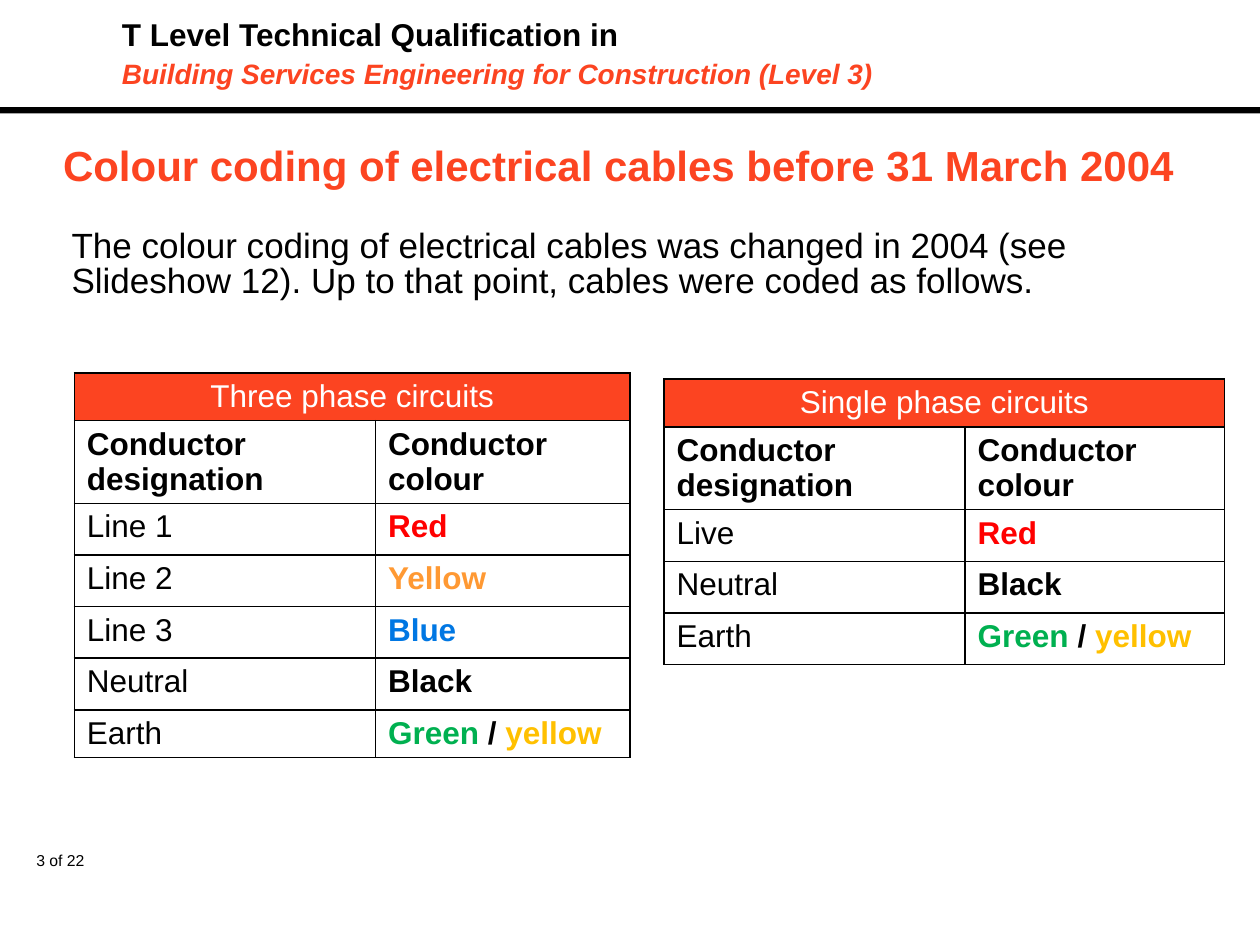
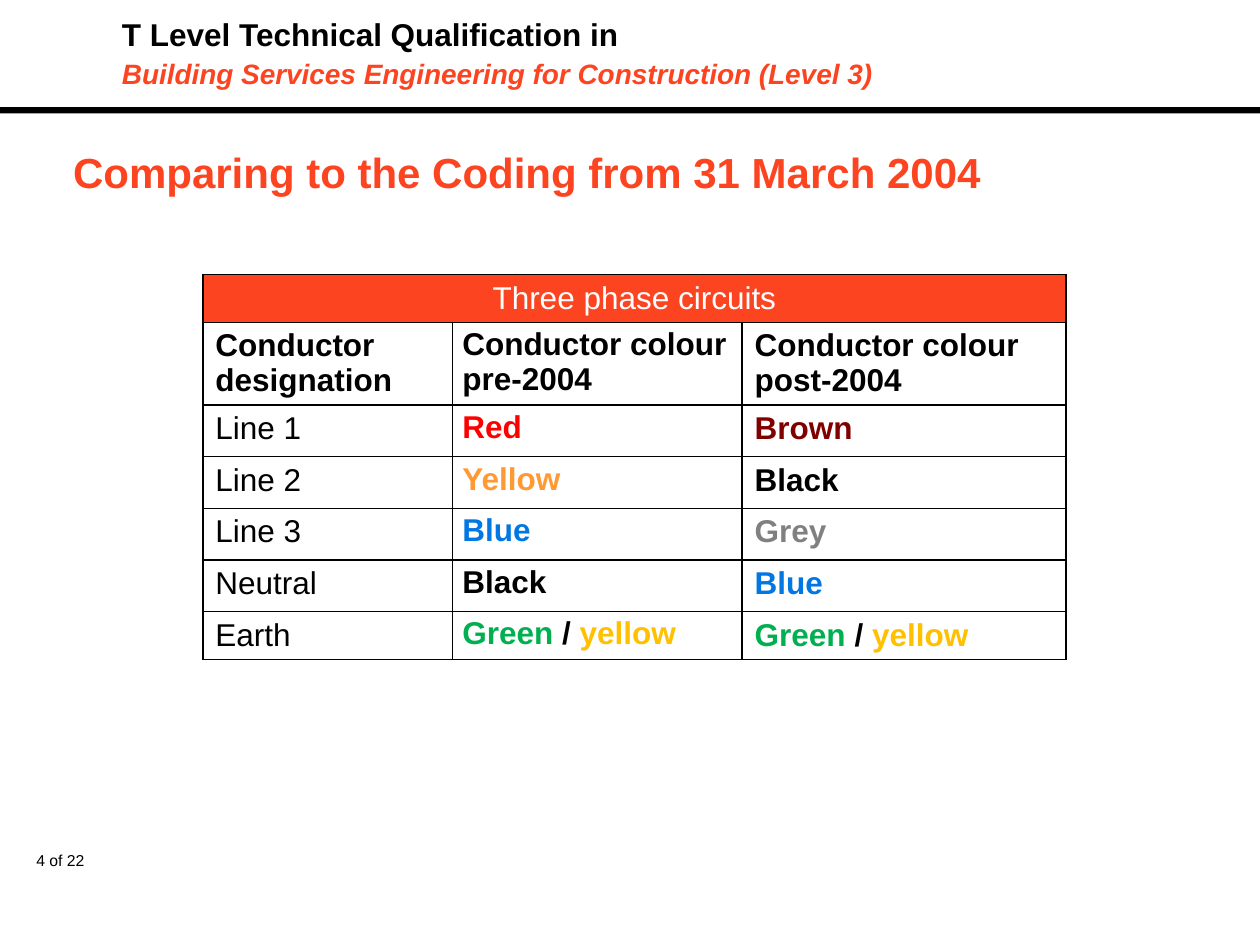
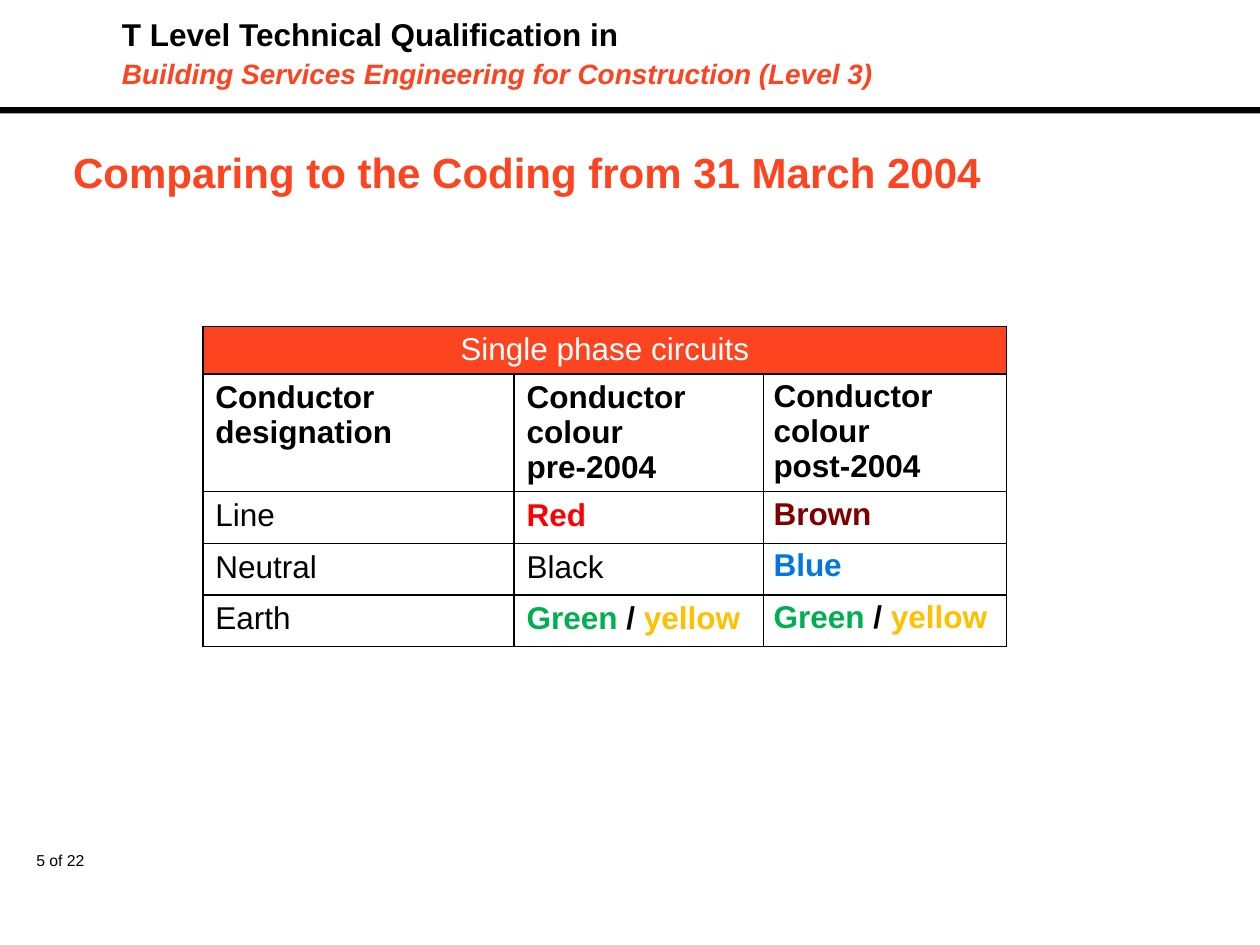
from pptx import Presentation
from pptx.dml.color import RGBColor
from pptx.enum.shapes import MSO_SHAPE as Shape
from pptx.enum.text import MSO_ANCHOR as Anchor, MSO_AUTO_SIZE as AutoSize, PP_ALIGN as Align
from pptx.oxml import parse_xml
from pptx.oxml.ns import nsdecls
from pptx.util import Inches, Pt

# Shared look
FONT = "Arial"
WIDTH, HEIGHT = 10, 7.5
COLOURS = {"accent": "FC4421", "text": "000000", "paper": "FFFFFF"}
WORD_COLOURS = {"Red": "FF0000", "Yellow": "FF9933", "Blue": "0077E3", "Brown": "800000",
                "Grey": "808080", "Green": "00B050", "yellow": "FFC000"}
LINE_SPACING = 20
BANNER_ROW, BODY_ROW, LAST_ROW = 0.37, 0.41, 0.37
TIGHT_INSETS = (0.08, 0.04)
NORMAL_INSETS = (0.1, 0.05)

# Content
PROGRAMME = [("T Level Technical Qualification in", 18, "text", False),
             ("Building Services Engineering for Construction (Level 3)", 16, "accent", True)]
PAGE_TOTAL = 22
FIRST_PAGE = 3
EARTH_COLOUR = "Green / yellow"

SLIDES = [
    {
        "title": "Colour coding of electrical cables before 31 March 2004",
        "title_at": (0.5, 1.1),
        "intro": "The colour coding of electrical cables was changed in 2004 (see "
                 "Slideshow 12). Up to that point, cables were coded as follows.",
        "tables": [
            {"at": (0.59, 2.96), "columns": (2.39, 2.02), "heading_row": 0.65,
             "last_row": LAST_ROW, "banner": "Three phase circuits",
             "rows": [("Conductor designation", "Conductor colour"),
                      ("Line 1", "Red"), ("Line 2", "Yellow"), ("Line 3", "Blue"),
                      ("Neutral", "Black"), ("Earth", EARTH_COLOUR)]},
            {"at": (5.27, 3.01), "columns": (2.39, 2.06), "heading_row": 0.65,
             "banner": "Single phase circuits",
             "rows": [("Conductor designation", "Conductor colour"),
                      ("Live", "Red"), ("Neutral", "Black"), ("Earth", EARTH_COLOUR)]},
        ],
    },
    {
        "title": "Comparing to the Coding from 31 March 2004",
        "title_at": (0.58, 1.15),
        "tables": [
            {"at": (1.61, 2.18), "columns": (1.98, 2.3, 2.57), "heading_row": 0.65,
             "last_row": LAST_ROW, "tight_column": 1, "banner": "Three phase circuits",
             "rows": [("Conductor designation", "Conductor colour\npre-2004",
                       "Conductor colour\npost-2004"),
                      ("Line 1", "Red", "Brown"), ("Line 2", "Yellow", "Black"),
                      ("Line 3", "Blue", "Grey"), ("Neutral", "Black", "Blue"),
                      ("Earth", EARTH_COLOUR, EARTH_COLOUR)]},
        ],
    },
    {
        "title": "Comparing to the Coding from 31 March 2004",
        "title_at": (0.58, 1.15),
        "tables": [
            {"at": (1.61, 2.59), "columns": (2.47, 1.98, 1.93), "heading_row": 0.93,
             "tight_column": 2, "regular": {(2, 1)}, "banner": "Single phase circuits",
             "rows": [("Conductor designation", "Conductor colour\npre-2004",
                       "Conductor colour\npost-2004"),
                      ("Line", "Red", "Brown"), ("Neutral", "Black", "Blue"),
                      ("Earth", EARTH_COLOUR, EARTH_COLOUR)]},
        ],
    },
]


def style(font, size, colour, bold=False, italic=False):
    font.name, font.size, font.bold, font.italic = FONT, Pt(size), bold, italic
    font.color.rgb = RGBColor.from_string(colour)


def clear_insets(frame):
    frame.margin_left = frame.margin_right = frame.margin_top = frame.margin_bottom = 0


def add_text(slide, left, top, width, height, text):
    frame = slide.shapes.add_textbox(*map(Inches, (left, top, width, height))).text_frame
    frame.word_wrap = True
    frame.text = text
    return frame


# Header, rule and page number on every slide
def add_frame(slide, page):
    rule = slide.shapes.add_shape(Shape.RECTANGLE, 0, Inches(0.85), Inches(WIDTH), Inches(0.05))
    rule.shadow.inherit = False
    rule.fill.solid()
    rule.fill.fore_color.rgb = RGBColor.from_string(COLOURS["text"])
    rule.line.fill.background()

    header = add_text(slide, 0.87, 0.19, 6.26, 0.65, "\n".join(line[0] for line in PROGRAMME))
    for index, (paragraph, (_, size, colour, italic)) in enumerate(zip(header.paragraphs, PROGRAMME)):
        paragraph.line_spacing = Pt(13)
        paragraph.space_before = Pt(4 if index else 0)
        paragraph.space_after = Pt(4)
        style(paragraph.runs[0].font, size, COLOURS[colour], True, italic)

    number = add_text(slide, 0.19, 6.75, 0.48, 0.25, f"{page} of {PAGE_TOTAL}")
    clear_insets(number)
    number.paragraphs[0].alignment = Align.RIGHT
    style(number.paragraphs[0].runs[0].font, 9, COLOURS["text"])


def set_title(slide, text, left, top):
    title = slide.shapes.title
    title.left, title.top, title.width, title.height = map(Inches, (left, top, 9.4, 0.42))
    frame = title.text_frame
    frame.text = text
    frame.auto_size = AutoSize.NONE
    frame.vertical_anchor = Anchor.MIDDLE
    clear_insets(frame)
    frame.paragraphs[0].alignment = Align.LEFT
    style(frame.paragraphs[0].runs[0].font, 24, COLOURS["accent"], True)


# Tables
def add_borders(cell):
    for side in ("lnL", "lnR", "lnT", "lnB"):
        cell._tc.get_or_add_tcPr().append(parse_xml(
            f'<a:{side} {nsdecls("a")} w="12700"><a:solidFill>'
            f'<a:srgbClr val="{COLOURS["text"]}"/></a:solidFill></a:{side}>'))


def fill_cell(cell, text, bold, colour=COLOURS["text"], insets=NORMAL_INSETS):
    cell.margin_left = cell.margin_right = Inches(insets[0])
    cell.margin_top = cell.margin_bottom = Inches(insets[1])
    cell.text_frame.text = text
    for paragraph in cell.text_frame.paragraphs:
        paragraph.line_spacing = Pt(LINE_SPACING)
        words = paragraph.text.split(" ")
        coloured = any(word in WORD_COLOURS for word in words)
        if coloured:  # one run for each colour name
            paragraph.text = words[0] + " " * (len(words) > 1)
            for index, word in enumerate(words[1:], 2):
                paragraph.add_run().text = word + " " * (index < len(words))
        for run in paragraph.runs:
            style(run.font, 18, WORD_COLOURS.get(run.text.strip(), colour), bold)


def add_colour_table(slide, spec):
    columns, rows = spec["columns"], spec["rows"]
    heights = [BANNER_ROW, spec["heading_row"]] + [BODY_ROW] * (len(rows) - 1)
    heights[-1] = spec.get("last_row", BODY_ROW)
    table = slide.shapes.add_table(len(heights), len(columns), *map(
        Inches, (*spec["at"], sum(columns), sum(heights)))).table
    table.first_row = table.horz_banding = False
    for column, width in zip(table.columns, columns):
        column.width = Inches(width)
    for row, height in zip(table.rows, heights):
        row.height = Inches(height)
    for cell in table.iter_cells():
        add_borders(cell)
        cell.fill.background()

    banner = table.cell(0, 0)
    banner.merge(table.cell(0, len(columns) - 1))
    banner.fill.solid()
    banner.fill.fore_color.rgb = RGBColor.from_string(COLOURS["accent"])
    fill_cell(banner, spec["banner"], False, COLOURS["paper"])
    banner.text_frame.paragraphs[0].alignment = Align.CENTER

    for r, row in enumerate(rows):
        for c, text in enumerate(row):
            bold = (r == 0 or c > 0) and (r, c) not in spec.get("regular", ())
            insets = TIGHT_INSETS if c == spec.get("tight_column") else NORMAL_INSETS
            fill_cell(table.cell(r + 1, c), text, bold, insets=insets)


def main():
    deck = Presentation()
    deck.slide_width, deck.slide_height = Inches(WIDTH), Inches(HEIGHT)
    title_only = deck.slide_layouts[5]
    for page, content in enumerate(SLIDES, FIRST_PAGE):
        slide = deck.slides.add_slide(title_only)
        add_frame(slide, page)
        set_title(slide, content["title"], *content["title_at"])
        if "intro" in content:
            intro = add_text(slide, 0.47, 1.78, 9.03, 0.66, content["intro"]).paragraphs[0]
            intro.line_spacing = Pt(LINE_SPACING)
            style(intro.runs[0].font, 20, COLOURS["text"])
        for table in content["tables"]:
            add_colour_table(slide, table)
    deck.save("out.pptx")


if __name__ == "__main__":
    main()
